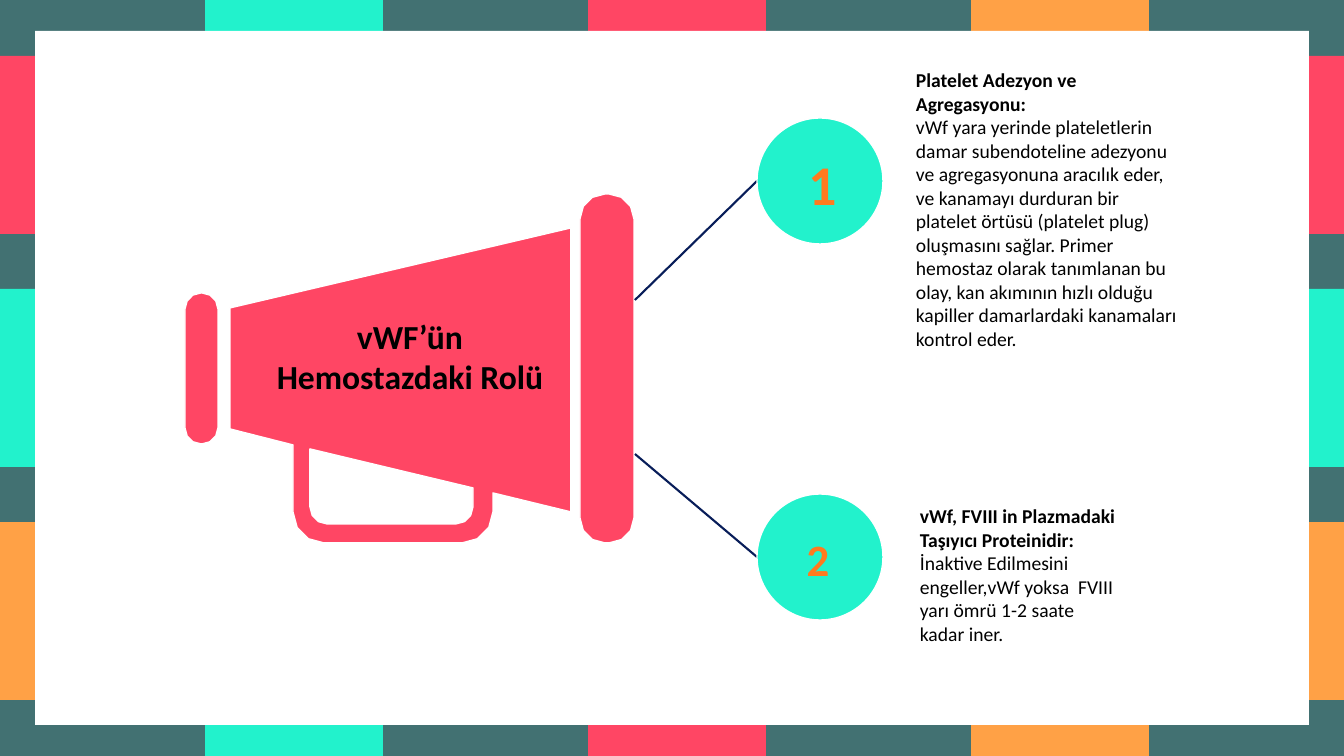
import dataclasses
import math

import pptx
import pptx.dml.color
import pptx.enum.shapes
import pptx.enum.text
import pptx.oxml
import pptx.oxml.ns
import pptx.util

EMU_PER_PX = 914400 / 100.8
SLIDE_BOX = (0, 0, 1344, 756)
SHAPE = pptx.enum.shapes.MSO_SHAPE
ALIGN = pptx.enum.text.PP_ALIGN
ANCHOR = pptx.enum.text.MSO_ANCHOR


@dataclasses.dataclass(frozen=True)
class Theme:
    font: str = "Calibri"
    frame: str = "427172"
    teal: str = "22F2CC"
    pink: str = "FF4664"
    orange: str = "FFA146"
    paper: str = "FFFFFF"
    ink: str = "000000"
    number: str = "FF7A1F"
    connector: str = "081D59"
    title_size: int = 24
    body_size: int = 14


THEME = Theme()

# Text box and number box sizes are px; each paragraph is a list of (text, bold).
ROLES = [
    {
        "top": 118, "number": "1", "number_size": 40, "number_shift": 3,
        "line_start": (635, 300), "text_box": (906, 63, 286, 295),
        "paragraphs": [
            [("Platelet Adezyon ve Agregasyonu:", True)],
            [("vWf yara yerinde plateletlerin damar subendoteline adezyonu ve "
              "agregasyonuna aracılık eder, ve kanamayı durduran bir platelet "
              "örtüsü (platelet plug) oluşmasını sağlar. Primer hemostaz olarak "
              "tanımlanan bu olay, kan akımının hızlı olduğu kapiller "
              "damarlardaki kanamaları kontrol eder.", False)],
        ],
    },
    {
        "top": 494, "number": "2", "number_size": 32, "number_shift": -2,
        "line_start": (635, 454), "text_box": (910, 499, 222, 183),
        "paragraphs": [
            [("vWf, FVIII in Plazmadaki Taşıyıcı Proteinidir: ", True),
             ("İnaktive Edilmesini engeller,vWf yoksa  FVIII yarı ömrü 1-2 "
              "saate kadar iner.", False)],
        ],
    },
]


def px(length):
    return pptx.util.Emu(round(length * EMU_PER_PX))


def rgb(code):
    return pptx.dml.color.RGBColor.from_string(code)


def paint(shape, fill, outline=None):
    shape.shadow.inherit = False
    shape.fill.solid()
    shape.fill.fore_color.rgb = rgb(fill)
    if outline:
        shape.line.color.rgb = rgb(outline)
        shape.line.width = pptx.util.Pt(1)
    else:
        shape.line.fill.background()


def add_shape(slide, kind, box, fill, outline=None):
    shape = slide.shapes.add_shape(kind, *map(px, box))
    paint(shape, fill, outline)
    return shape


def write_text(shape, paragraphs, size, color=THEME.ink, align=ALIGN.LEFT, anchor=ANCHOR.TOP):
    frame = shape.text_frame
    frame.word_wrap = True
    frame.auto_size = pptx.enum.text.MSO_AUTO_SIZE.NONE
    frame.vertical_anchor = anchor
    for index, runs in enumerate(paragraphs):
        paragraph = frame.add_paragraph() if index else frame.paragraphs[0]
        paragraph.alignment = align
        for text, bold in runs:
            run = paragraph.add_run()
            run.text = text
            run.font.name = THEME.font
            run.font.size = pptx.util.Pt(size)
            run.font.bold = bold
            run.font.color.rgb = rgb(color)


def add_frame(slide, box):
    """Draw the striped border and the white sheet inside it."""
    left, top, width, height = box
    band = 178
    add_shape(slide, SHAPE.RECTANGLE, box, THEME.frame)
    for index, color in enumerate((THEME.pink, THEME.teal, THEME.orange)):
        add_shape(slide, SHAPE.RECTANGLE, (left, top + 56 + 233 * index, width, band), color)
    for index, color in enumerate((THEME.teal, THEME.pink, THEME.orange)):
        add_shape(slide, SHAPE.RECTANGLE, (left + 205 + 383 * index, top, band, height), color)
    sheet = (left + 35, top + 31, width - 70, height - 62)
    add_shape(slide, SHAPE.RECTANGLE, sheet, THEME.paper)


def round_corners(corners, steps=3):
    """Turn (x, y, radius) corners into points, with an arc at each right angle."""
    points = []
    for index, (x, y, radius) in enumerate(corners):
        if not radius:
            points.append((x, y))
            continue
        ends = []
        for other in (corners[index - 1], corners[(index + 1) % len(corners)]):
            ratio = radius / math.dist((x, y), other[:2])
            ends.append((x + (other[0] - x) * ratio, y + (other[1] - y) * ratio))
        (ax, ay), (bx, by) = ends
        for step in range(steps + 1):
            angle = math.pi / 2 * step / steps
            a, b = 1 - math.sin(angle), 1 - math.cos(angle)
            points.append((x + (ax - x) * a + (bx - x) * b,
                           y + (ay - y) * a + (by - y) * b))
    return points


def bar(left, top, width, height, radius):
    right, bottom = left + width, top + height
    return [(left, top, radius), (right, top, radius),
            (right, bottom, radius), (left, bottom, radius)]


def add_megaphone(slide, box):
    left, top, width, height = box
    rim = bar(width - 54, 0, 54, height, 25)
    mouthpiece = bar(0, 99, 33, 151, 16)
    horn_and_handle = [(45, 114, 0), (386, 34, 0), (386, 318, 0), (308, 299, 0),
                       (308, height, 31), (108, height, 31), (108, 251, 0), (45, 235, 0)]
    handle_hole = [(288, 294, 0), (288, 330, 17), (125, 330, 17), (125, 255, 0)]
    builder = None
    for corners in (rim, horn_and_handle, handle_hole, mouthpiece):
        points = [(px(left + x), px(top + y)) for x, y in round_corners(corners)]
        if builder is None:
            builder = slide.shapes.build_freeform(*points[0])
        else:
            builder.move_to(*points[0])
        builder.add_line_segments(points[1:], close=True)
    paint(builder.convert_to_shape(), THEME.pink, THEME.paper)


def add_title(slide, box):
    title = slide.shapes.title
    title.left, title.top, title.width, title.height = map(px, box)
    write_text(title, [[("vWF’ün", True)], [("Hemostazdaki Rolü", True)]],
               size=THEME.title_size, align=ALIGN.CENTER)
    slide.shapes.element.append(title.element)  # in front of the megaphone


def add_role(slide, box, role):
    """Draw a numbered circle in the box, its line to the megaphone and its text."""
    left, top, width, height = box
    middle = top + height / 2
    line = slide.shapes.add_connector(pptx.enum.shapes.MSO_CONNECTOR.STRAIGHT,
                                      *map(px, (*role["line_start"], left, middle)))
    line.line.color.rgb = rgb(THEME.connector)
    line.line.width = pptx.util.Pt(1.5)
    properties = line.element.find(pptx.oxml.ns.qn("p:spPr"))
    properties.append(pptx.oxml.parse_xml(
        f"<a:effectLst {pptx.oxml.ns.nsdecls('a')}/>"))

    add_shape(slide, SHAPE.OVAL, box, THEME.teal, THEME.paper)
    description = slide.shapes.add_textbox(*map(px, role["text_box"]))
    write_text(description, role["paragraphs"], size=THEME.body_size)
    number_box = (left + width / 2 - 26 + role["number_shift"], middle - 37, 52, 78)
    number = slide.shapes.add_textbox(*map(px, number_box))
    write_text(number, [[(role["number"], True)]], size=role["number_size"],
               color=THEME.number, align=ALIGN.CENTER, anchor=ANCHOR.MIDDLE)


def main():
    presentation = pptx.Presentation()
    presentation.slide_width, presentation.slide_height = map(px, SLIDE_BOX[2:])
    title_only = presentation.slide_layouts[5]
    slide = presentation.slides.add_slide(title_only)
    add_frame(slide, SLIDE_BOX)
    add_megaphone(slide, (185, 194, 449, 349))
    for role in ROLES:
        add_role(slide, (757, role["top"], 126, 126), role)
    add_title(slide, (133, 311, 554, 183))
    presentation.save("out.pptx")


if __name__ == "__main__":
    main()
